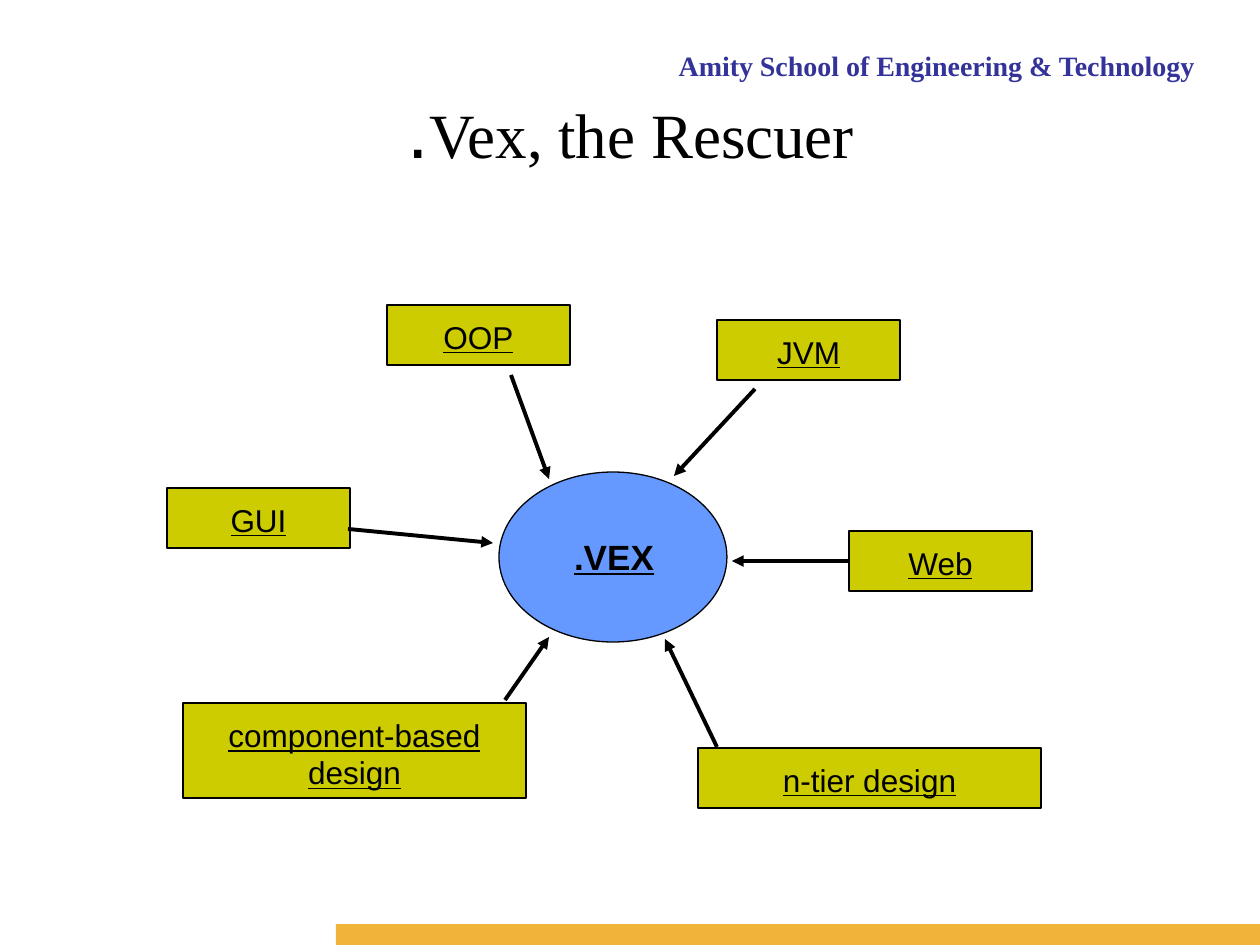
from lxml import etree
from pptx import Presentation
from pptx.dml.color import RGBColor
from pptx.enum.shapes import MSO_CONNECTOR, MSO_SHAPE
from pptx.enum.text import MSO_ANCHOR, PP_ALIGN
from pptx.oxml.ns import qn
from pptx.util import Inches, Pt

PX = Inches(1) / 126
RECT, OVAL = MSO_SHAPE.RECTANGLE, MSO_SHAPE.OVAL
STRAIGHT = MSO_CONNECTOR.STRAIGHT
CENTER, RIGHT = PP_ALIGN.CENTER, PP_ALIGN.RIGHT
TOP = MSO_ANCHOR.TOP

BLACK = RGBColor(0x00, 0x00, 0x00)
NAVY = RGBColor(0x33, 0x33, 0x99)
ORANGE = RGBColor(0xF1, 0xB4, 0x3B)
BLUE = RGBColor(0x66, 0x99, 0xFF)
OLIVE = RGBColor(0xCC, 0xCC, 0x00)


def emu(*lengths):
    return [round(n * PX) for n in lengths]


def style(run, size, name="Arial", color=BLACK, bold=False, underline=False):
    f = run.font
    f.size, f.name, f.bold, f.underline = Pt(size), name, bold, underline
    f.color.rgb = color


prs = Presentation()
prs.slide_width, prs.slide_height = emu(1260, 945)
s = prs.slides.add_slide(prs.slide_layouts[5])

# Title
title = s.shapes.title
title.left, title.top, title.width, title.height = emu(64, 76, 1134, 157)
tf = title.text_frame
tf.vertical_anchor = TOP
tf.margin_top = emu(6)[0]
p = tf.paragraphs[0]
p.alignment = CENTER
for text, size, name in [(".", 44, "Arial"),
                         ("Vex, the Rescuer", 36, "Times New Roman")]:
    r = p.add_run()
    r.text = text
    style(r, size, name)

# School name and bottom bar
header = s.shapes.add_textbox(*emu(567, 42, 640, 42))
header.text_frame.word_wrap = True
p = header.text_frame.paragraphs[0]
p.text = "Amity School of Engineering & Technology"
p.alignment = RIGHT
style(p.runs[0], 16, "Times New Roman", NAVY, bold=True)

bar = s.shapes.add_shape(RECT, *emu(336, 924, 924, 21))
bar.shadow.inherit = False
bar.fill.solid()
bar.fill.fore_color.rgb = ORANGE
bar.line.fill.background()

# Hub
hub = s.shapes.add_shape(OVAL, *emu(499, 472, 228, 170))
hub.shadow.inherit = False
hub.fill.solid()
hub.fill.fore_color.rgb = BLUE
hub.line.color.rgb = BLACK
hub.line.width = Pt(0.75)

label = s.shapes.add_textbox(*emu(515, 529, 198, 52))
label.text_frame.word_wrap = True
p = label.text_frame.paragraphs[0]
p.text = ".VEX"
p.alignment = CENTER
style(p.runs[0], 20, bold=True, underline=True)

# Technologies around the hub
boxes = {}
for text, x, y, w, h in [
    ("OOP", 387, 305, 183, 60),
    ("JVM", 717, 320, 183, 60),
    ("GUI", 167, 488, 183, 60),
    ("Web", 849, 531, 183, 60),
    ("component-based design", 183, 703, 343, 95),
    ("n-tier design", 698, 748, 343, 60),
]:
    sp = s.shapes.add_shape(RECT, *emu(x, y, w, h))
    sp.shadow.inherit = False
    sp.fill.solid()
    sp.fill.fore_color.rgb = OLIVE
    sp.line.color.rgb = BLACK
    sp.line.width = Pt(1)
    tf = sp.text_frame
    tf.word_wrap = True
    tf.vertical_anchor = TOP
    tf.margin_left = tf.margin_right = Inches(0.2)
    tf.margin_top = tf.margin_bottom = Inches(0.1)
    p = tf.paragraphs[0]
    p.text = text
    p.alignment = CENTER
    style(p.runs[0], 18, underline=True)
    boxes[text] = sp

# Arrows into the hub
for source, *ends in [
    ("OOP", 511, 375, 549, 479),
    ("JVM", 755, 389, 674, 476),
    ("Web", 849, 561, 732, 561),
    ("GUI", 348, 529, 493, 543),
    ("component-based design", 505, 700, 549, 637),
    ("n-tier design", 717, 747, 665, 639),
]:
    arrow = s.shapes.add_connector(STRAIGHT, *emu(*ends))
    if source == "Web":
        arrow.begin_connect(boxes[source], 1)
    arrow.line.color.rgb = BLACK
    arrow.line.width = Pt(2.25)
    etree.SubElement(arrow.line._get_or_add_ln(), qn("a:tailEnd"), type="triangle")
    etree.SubElement(arrow._element.spPr, qn("a:effectLst"))

prs.save("out.pptx")
